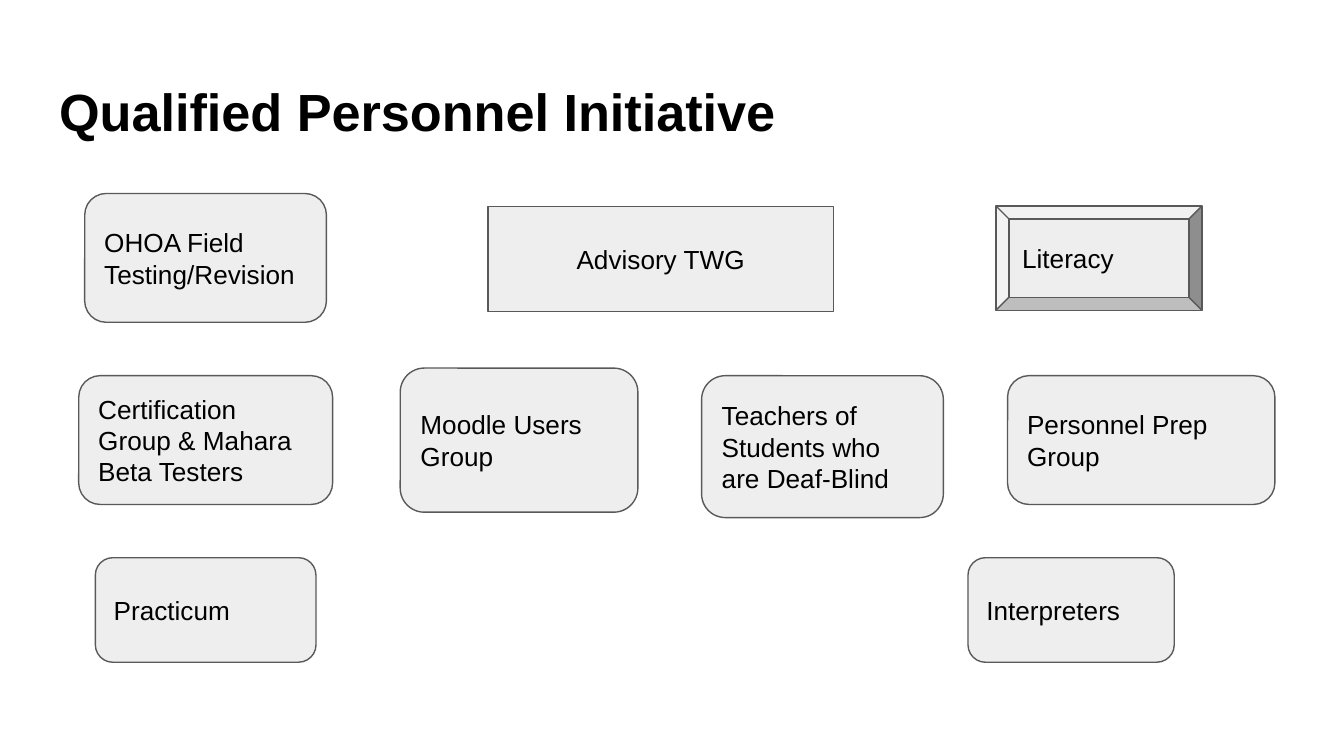
from pptx import Presentation
from pptx import util as u
from pptx.dml.color import RGBColor
from pptx.enum import shapes, text

HUES = {"ink": "000000", "fill": "EEEEEE", "edge": "595959"}
KIND = shapes.MSO_SHAPE
SIDE = text.PP_ALIGN


def hue(name):
    return RGBColor.from_string(HUES[name])


def write(shape, words, size=14, bold=False, align=SIDE.LEFT,
          anchor=text.MSO_ANCHOR.MIDDLE):
    frame = shape.text_frame
    frame.text = words
    frame.word_wrap = True
    frame.auto_size = text.MSO_AUTO_SIZE.NONE
    frame.vertical_anchor = anchor
    frame.margin_left = frame.margin_right = u.Pt(7.2)
    frame.margin_top = frame.margin_bottom = u.Pt(7.2)
    para = frame.paragraphs[0]
    para.alignment = align
    font = para.runs[0].font
    font.name, font.size, font.bold = "Arial", u.Pt(size), bold
    font.color.rgb = hue("ink")


class Deck:
    def __init__(self, wide, high):
        self.show = Presentation()
        self.show.slide_width = u.Pt(wide)
        self.show.slide_height = u.Pt(high)
        self.slide = self.show.slides.add_slide(self.show.slide_layouts[5])

    def title(self, words, left, top, wide, high):
        head = self.slide.shapes.title
        head.left, head.top = u.Pt(left), u.Pt(top)
        head.width, head.height = u.Pt(wide), u.Pt(high)
        write(head, words, size=28, bold=True, anchor=text.MSO_ANCHOR.TOP)

    def box(self, words, left, top, wide, high,
            kind=KIND.ROUNDED_RECTANGLE, align=SIDE.LEFT):
        box = self.slide.shapes.add_shape(
            kind, u.Pt(left), u.Pt(top), u.Pt(wide), u.Pt(high))
        box.shadow.inherit = False
        box.fill.solid()
        box.fill.fore_color.rgb = hue("fill")
        box.line.color.rgb = hue("edge")
        box.line.width = u.Pt(0.75)
        write(box, words, align=align)


def main():
    deck = Deck(720, 405)
    deck.title("Qualified Personnel Initiative", 24.5, 35.5, 671, 45)
    deck.box("Advisory TWG", 261.5, 110.8, 185, 56,
             kind=KIND.RECTANGLE, align=SIDE.CENTER)
    deck.box("Literacy", 533.5, 110.3, 110.5, 56, kind=KIND.BEVEL)

    low, tall = 56, 69
    groups = [
        ("OHOA Field Testing/Revision", 45.4, 103.7, 129.5, tall),
        ("Certification Group & Mahara Beta Testers", 42.2, 201.3, 136, tall),
        ("Moodle Users Group", 214.4, 197.2, 127.3, 77.2),
        ("Teachers of Students who are Deaf-Blind", 375.9, 201.3, 129.5, 76),
        ("Personnel Prep Group", 539.8, 201.3, 143.2, tall),
        ("Practicum", 51.1, 298.8, 118.2, low),
        ("Interpreters", 518.6, 298.8, 110.5, low),
    ]
    for group in groups:
        deck.box(*group)
    deck.show.save("out.pptx")


if __name__ == "__main__":
    main()
